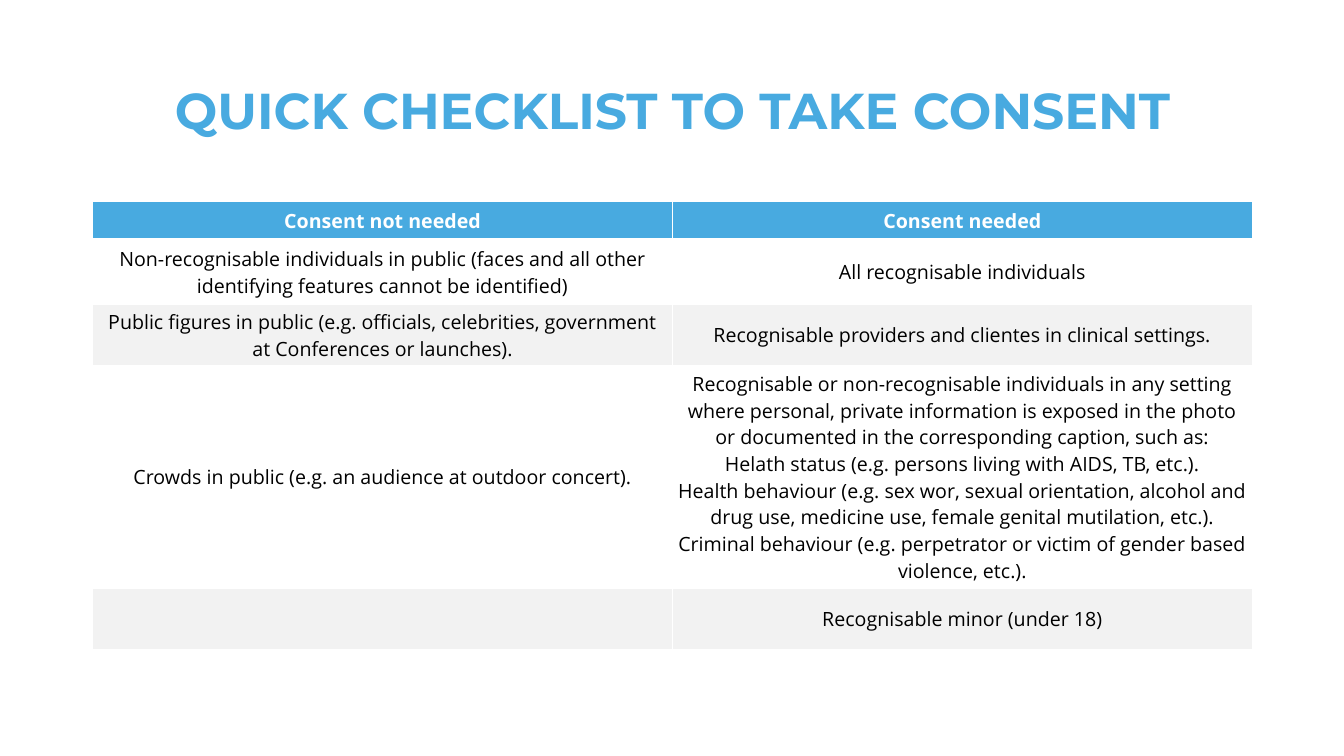
from dataclasses import dataclass

from lxml import etree
from pptx import Presentation
from pptx.dml.color import RGBColor
from pptx.enum.text import MSO_ANCHOR, PP_ALIGN
from pptx.oxml.ns import qn
from pptx.util import Inches, Pt

CENTER = PP_ALIGN.CENTER
MIDDLE = MSO_ANCHOR.MIDDLE
TITLE_ONLY_LAYOUT = 5


@dataclass(frozen=True)
class Theme:
    accent: str = "48AAE0"
    white: str = "FFFFFF"
    band: str = "F2F2F2"
    text: str = "000000"
    title_font: str = "Montserrat"
    body_font: str = "Open Sans"
    title_size: int = 36
    body_size: int = 14
    rule: int = 1
    header_rule: int = 3


THEME = Theme()

CHECKLIST = [
    ("Consent not needed", "Consent needed"),
    (
        "Non-recognisable individuals in public (faces and all other identifying features cannot be identified)",
        "All recognisable individuals",
    ),
    (
        "Public figures in public (e.g. officials, celebrities, government at Conferences or launches).",
        "Recognisable providers and clientes in clinical settings.",
    ),
    (
        "Crowds in public (e.g. an audience at outdoor concert).",
        "Recognisable or non-recognisable individuals in any setting where personal, private information "
        "is exposed in the photo or documented in the corresponding caption, such as:\n"
        "Helath status (e.g. persons living with AIDS, TB, etc.).\n"
        "Health behaviour (e.g. sex wor, sexual orientation, alcohol and drug use, medicine use, "
        "female genital mutilation, etc.).\n"
        "Criminal behaviour (e.g. perpetrator or victim of gender based violence, etc.).",
    ),
    ("", "Recognisable minor (under 18)"),
]
ROW_HEIGHTS = [0.38, 0.64, 0.6, 2.21, 0.61]


def set_font(paragraph, name, size, color, bold):
    paragraph.alignment = CENTER
    paragraph.font.name = name
    paragraph.font.size = Pt(size)
    paragraph.font.bold = bold
    paragraph.font.color.rgb = RGBColor.from_string(color)


def set_borders(cell, bottom_width):
    properties = cell._tc.get_or_add_tcPr()
    widths = {"a:lnL": THEME.rule, "a:lnR": THEME.rule, "a:lnT": THEME.rule, "a:lnB": bottom_width}
    for tag, width in widths.items():
        line = etree.SubElement(properties, qn(tag), w=str(Pt(width)))
        fill = etree.SubElement(line, qn("a:solidFill"))
        etree.SubElement(fill, qn("a:srgbClr"), val=THEME.white)


def format_cell(cell, text, row_index):
    is_header = row_index == 0
    set_borders(cell, THEME.header_rule if is_header else THEME.rule)
    if is_header or row_index % 2 == 0:
        cell.fill.solid()
        cell.fill.fore_color.rgb = RGBColor.from_string(THEME.accent if is_header else THEME.band)
    else:
        cell.fill.background()
    cell.margin_left = cell.margin_right = cell.margin_top = cell.margin_bottom = Inches(0.04)
    cell.vertical_anchor = MIDDLE
    cell.text = text
    for paragraph in cell.text_frame.paragraphs:
        set_font(paragraph, THEME.body_font, THEME.body_size, THEME.white if is_header else THEME.text, is_header)


def add_title(slide, left, top, width, height):
    title = slide.shapes.title
    title.left, title.top, title.width, title.height = map(Inches, (left, top, width, height))
    title.text_frame.text = "QUICK CHECKLIST TO TAKE CONSENT"
    title.text_frame.word_wrap = True
    title.text_frame.vertical_anchor = MIDDLE
    paragraph = title.text_frame.paragraphs[0]
    paragraph.line_spacing = 0.9
    set_font(paragraph, THEME.title_font, THEME.title_size, THEME.accent, True)


def add_checklist(slide, left, top, width):
    column_count = len(CHECKLIST[0])
    frame = slide.shapes.add_table(
        len(CHECKLIST), column_count, Inches(left), Inches(top), Inches(width), Inches(sum(ROW_HEIGHTS))
    )
    table = frame.table
    table.horz_banding = False
    for column in table.columns:
        column.width = Inches(width / column_count)
    for row_index, (texts, height) in enumerate(zip(CHECKLIST, ROW_HEIGHTS)):
        table.rows[row_index].height = Inches(height)
        for column_index, text in enumerate(texts):
            format_cell(table.cell(row_index, column_index), text, row_index)


def main():
    presentation = Presentation()
    presentation.slide_width = Inches(13.33)
    presentation.slide_height = Inches(7.5)
    slide = presentation.slides.add_slide(presentation.slide_layouts[TITLE_ONLY_LAYOUT])
    add_title(slide, 1.62, 0.4, 10.1, 1.45)
    add_checklist(slide, 0.92, 2, 11.5)
    presentation.save("out.pptx")


if __name__ == "__main__":
    main()
